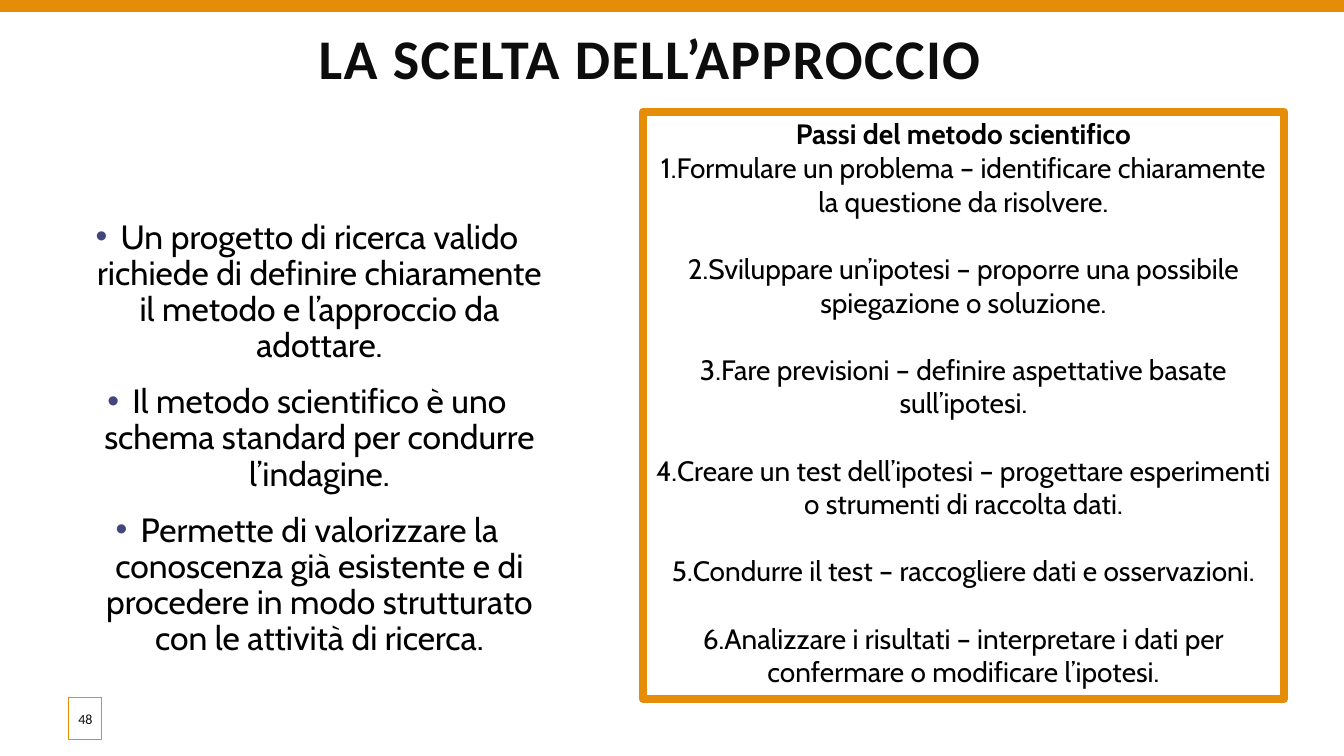
from lxml import etree
from pptx import Presentation, util as u
from pptx.dml.color import RGBColor
from pptx.enum import shapes, text
from pptx.oxml.ns import qn

ORANGE, WHITE, BLACK, INK, BULLET = "E58C09", "FFFFFF", "000000", "0D0D0D", "43467B"

POINTS = [
    "Un progetto di ricerca valido richiede di definire chiaramente il metodo e l’approccio da adottare.",
    "Il metodo scientifico è uno schema standard per condurre l’indagine.",
    "Permette di valorizzare la conoscenza già esistente e di procedere in modo strutturato "
    "con le attività di ricerca.",
]
STEPS = [
    "Formulare un problema – identificare chiaramente la questione da risolvere.",
    "Sviluppare un’ipotesi – proporre una possibile spiegazione o soluzione.",
    "Fare previsioni – definire aspettative basate sull’ipotesi.",
    "Creare un test dell’ipotesi – progettare esperimenti o strumenti di raccolta dati.",
    "Condurre il test – raccogliere dati e osservazioni.",
    "Analizzare i risultati – interpretare i dati per confermare o modificare l’ipotesi.",
]


def px(n):
    return u.Emu(round(n * 914400 / 100.8))


def color(hex_):
    return RGBColor.from_string(hex_)


def sub(parent, tag, **attrs):
    return etree.SubElement(parent, qn(tag), **attrs)


def add_rect(slide, box, fill, line=None, width=0, alpha=None):
    sp = slide.shapes.add_shape(shapes.MSO_SHAPE.RECTANGLE, *map(px, box))
    sp.shadow.inherit = False
    sp.fill.solid()
    sp.fill.fore_color.rgb = color(fill)
    if alpha:
        sub(sp.fill._xPr.find(qn("a:solidFill"))[0], "a:alpha", val=str(alpha * 1000))
    if line:
        sp.line.color.rgb = color(line)
        sp.line.width = u.Pt(width)
        sub(sp.line._get_or_add_ln(), "a:round")
    else:
        sp.line.fill.background()
    return sp


def setup_frame(sp, anchor=text.MSO_ANCHOR.TOP):
    tf = sp.text_frame
    tf.word_wrap = True
    tf.vertical_anchor = anchor
    return tf


def write(tf, words, size, font="Cabin", ink=BLACK, bold=False, spacing=0,
          before=0, after=0, line=1.0, bullet=None, number=False, indent=0):
    """Put one centred paragraph into the frame, using its empty first one if free."""
    first = not tf.text
    p = tf.paragraphs[0] if first else tf.add_paragraph()
    p.alignment = text.PP_ALIGN.CENTER
    p.line_spacing = line
    p.space_before = u.Pt(0 if first else before)
    p.space_after = u.Pt(after)
    ppr = p._p.get_or_add_pPr()
    ppr.set("marL", str(px(indent)))
    ppr.set("indent", str(-px(indent)))
    if bullet:
        sub(sub(ppr, "a:buClr"), "a:srgbClr", val=BULLET)
        sub(ppr, "a:buFont", typeface="Arial")
        sub(ppr, "a:buChar", char=bullet)
    elif number:
        sub(ppr, "a:buFont", typeface=font)
        sub(ppr, "a:buAutoNum", type="arabicPeriod")
    r = p.add_run()
    r.text = words
    r.font.size = u.Pt(size)
    r.font.name = font
    r.font.bold = bold
    r.font.color.rgb = color(ink)
    if spacing:
        r._r.get_or_add_rPr().set("spc", str(spacing * 100))
    return p


def add_title(slide, box, words):
    tf = setup_frame(slide.shapes.add_textbox(*map(px, box)), text.MSO_ANCHOR.MIDDLE)
    write(tf, words, 40, font="Calibri", ink=INK, bold=True, spacing=1, line=0.9)


def add_points(slide, box):
    tf = setup_frame(slide.shapes.add_textbox(*map(px, box)))
    for point in POINTS:
        write(tf, point, 24, before=12, after=2, line=0.9, bullet="•", indent=25)


def add_page_number(slide, box, number):
    tf = setup_frame(add_rect(slide, box, WHITE, ORANGE, 0.75, alpha=82), text.MSO_ANCHOR.MIDDLE)
    tf.margin_left = tf.margin_right = 0
    write(tf, number, 10, font="Calibri", ink=INK)


def add_steps(slide, box):
    tf = setup_frame(add_rect(slide, box, WHITE, ORANGE, 6))
    write(tf, "Passi del metodo scientifico", 20, bold=True)
    for i, step in enumerate(STEPS):
        write(tf, step, 20, number=True, before=24 if i else 0)


def main():
    prs = Presentation()
    prs.slide_width, prs.slide_height = px(1344), px(756)
    slide = prs.slides.add_slide(prs.slide_layouts[6])
    add_rect(slide, (0, 0, 1344, 12), ORANGE)
    add_title(slide, (60, 17, 1180, 88), "LA SCELTA DELL’APPROCCIO")
    add_points(slide, (60, 215, 494, 403))
    add_page_number(slide, (69, 698, 33, 42), "48")
    add_steps(slide, (643, 112, 641, 587))
    prs.save("out.pptx")


if __name__ == "__main__":
    main()
